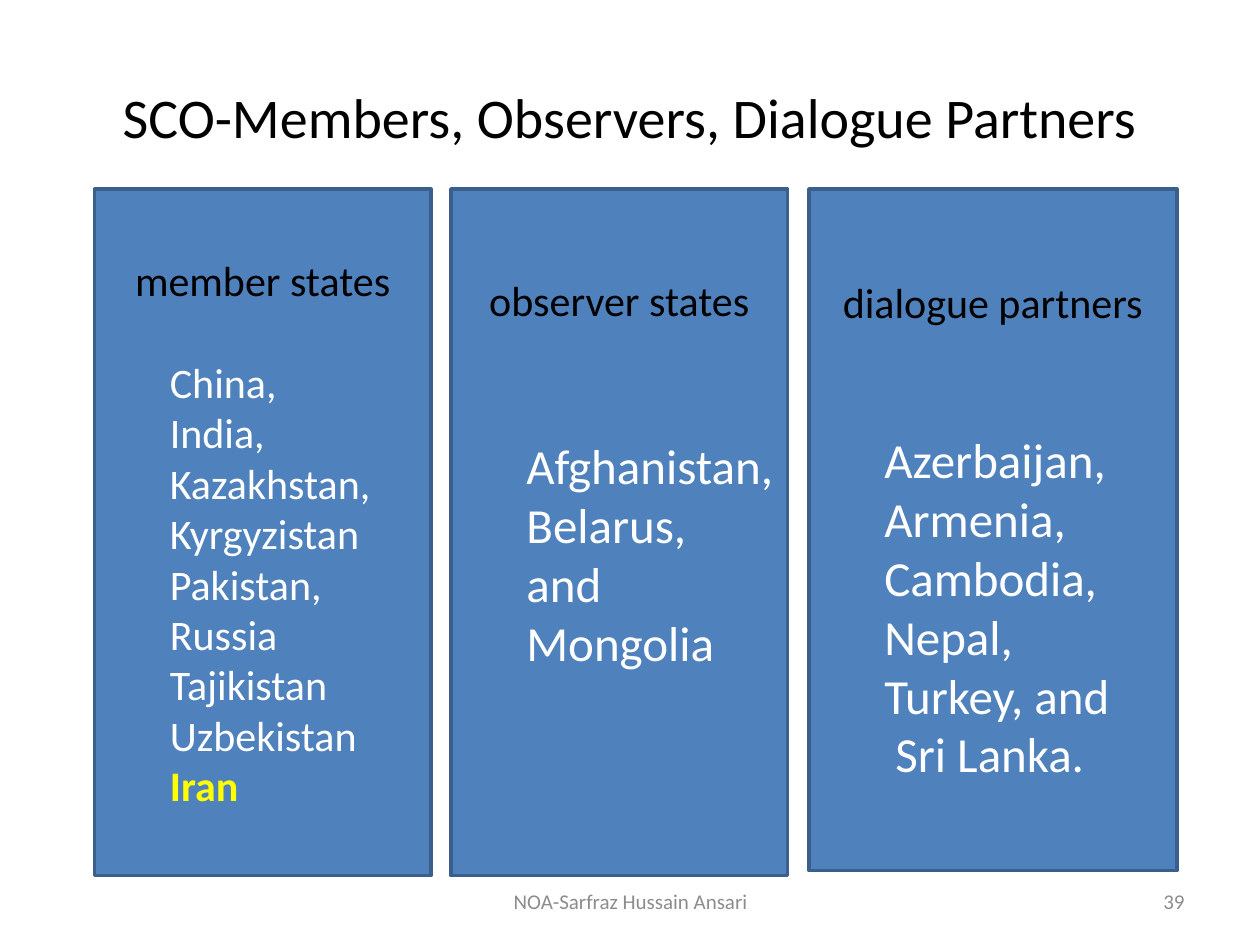
"""Build a slide listing SCO members, observers and dialogue partners."""
from dataclasses import dataclass

from pptx import Presentation
from pptx.dml.color import RGBColor as Color
from pptx.enum.shapes import MSO_SHAPE as Shape
from pptx.enum.text import MSO_ANCHOR as Anchor, PP_ALIGN as Align
from pptx.util import Inches, Pt


@dataclass(frozen=True)
class Theme:
    font: str = "Calibri"
    black: str = "000000"
    white: str = "FFFFFF"
    grey: str = "8C8C8C"
    highlight: str = "FFFF00"
    panel: str = "4F81BD"
    border: str = "3A5F8C"
    title_size: int = 32
    heading_size: int = 24
    large_size: int = 28
    footer_size: int = 12


class SlideBuilder:
    def __init__(self, slide, theme):
        self.slide = slide
        self.theme = theme

    def style(self, paragraph, text, size, color, align, bold=False):
        paragraph.text = text
        paragraph.alignment = align
        font = paragraph.font
        font.name, font.size, font.bold = self.theme.font, Pt(size), bold
        font.color.rgb = Color.from_string(color)

    def text(self, text, box, size, color, align=Align.CENTER):
        frame = self.slide.shapes.add_textbox(*map(Inches, box)).text_frame
        frame.word_wrap = True
        frame.vertical_anchor = Anchor.MIDDLE
        self.style(frame.paragraphs[0], text, size, color, align)

    def panel(self, box, heading, countries, size, gap, bottom=0.05, highlighted=()):
        theme = self.theme
        shape = self.slide.shapes.add_shape(Shape.RECTANGLE, *map(Inches, box))
        shape.shadow.inherit = False
        shape.fill.solid()
        shape.fill.fore_color.rgb = Color.from_string(theme.panel)
        shape.line.color.rgb = Color.from_string(theme.border)
        shape.line.width = Pt(2)
        frame = shape.text_frame
        frame.word_wrap = True
        frame.vertical_anchor = Anchor.MIDDLE
        frame.margin_bottom = Inches(bottom)
        title = frame.paragraphs[0]
        self.style(title, heading, theme.heading_size, theme.black, Align.CENTER)
        title.space_after = Pt(gap)
        for country in countries:
            paragraph = frame.add_paragraph()
            special = country in highlighted
            color = theme.highlight if special else theme.white
            self.style(paragraph, country, size, color, Align.LEFT, special)
            paragraph.level = 1
            properties = paragraph._p.get_or_add_pPr()
            properties.set("marL", str(Inches(0.5)))
            properties.set("indent", "0")


def main():
    presentation = Presentation()
    presentation.slide_width, presentation.slide_height = Inches(10), Inches(7.5)
    slide = presentation.slides.add_slide(presentation.slide_layouts[6])
    theme = Theme()
    builder = SlideBuilder(slide, theme)

    builder.text("SCO-Members, Observers, Dialogue Partners", (0.5, 0.3, 9, 1.25),
                 theme.title_size, theme.black)

    members = ("China,", "India,", "Kazakhstan,", "Kyrgyzistan", "Pakistan,",
               "Russia", "Tajikistan", "Uzbekistan", "Iran")
    observers = ("Afghanistan,", "Belarus,", "and", "Mongolia")
    partners = ("Azerbaijan,", "Armenia,", "Cambodia,", "Nepal,",
                "Turkey, and", " Sri Lanka.")
    builder.panel((0.75, 1.5, 2.67, 5.45), "member states", members,
                  theme.heading_size, gap=29.3, highlighted=("Iran",))
    builder.panel((3.58, 1.5, 2.67, 5.45), "observer states", observers,
                  theme.large_size, gap=63.5, bottom=1)
    builder.panel((6.42, 1.5, 2.92, 5.41), "dialogue partners", partners,
                  theme.large_size, gap=58.6)

    builder.text("NOA-Sarfraz Hussain Ansari", (3.42, 6.95, 3.17, 0.4),
                 theme.footer_size, theme.grey)
    builder.text("39", (7.17, 6.95, 2.33, 0.4), theme.footer_size, theme.grey, Align.RIGHT)
    presentation.save("out.pptx")


if __name__ == "__main__":
    main()
